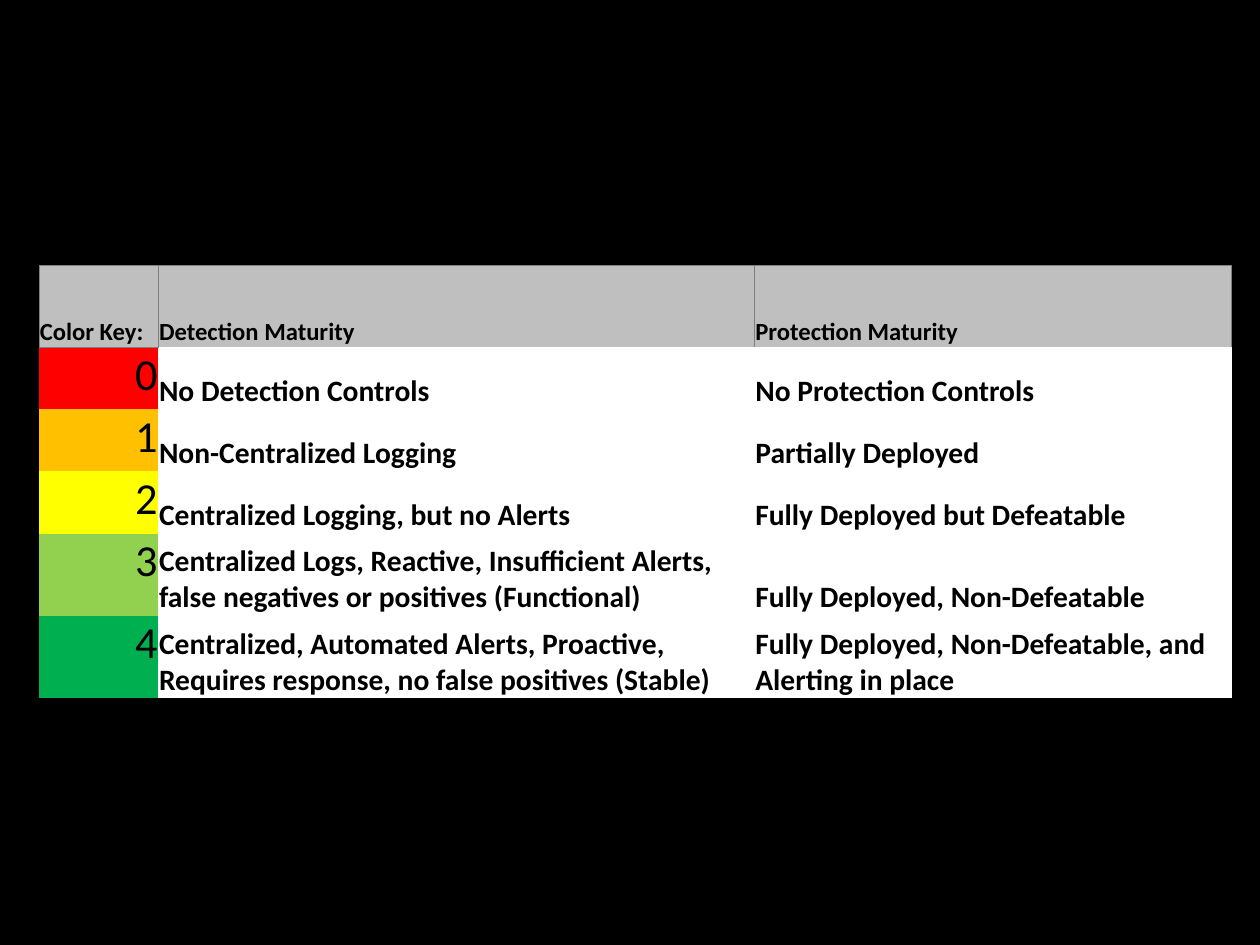
from dataclasses import dataclass

from lxml import etree
from pptx import Presentation
from pptx import util as u
from pptx.dml.color import RGBColor
from pptx.enum import text
from pptx.oxml import ns


@dataclass(frozen=True)
class Theme:
    font: str = "Calibri"
    background: str = "000000"
    ink: str = "000000"
    header_fill: str = "BFBFBF"
    body_fill: str = "FFFFFF"
    border: str = "7F7F7F"
    level_fills: tuple = ("FF0000", "FFC000", "FFFF00", "92D050", "00B050")
    header_size: int = 20
    level_size: int = 36
    body_size: int = 24
    border_width: float = 0.5


THEME = Theme()

HEADERS = ("Color Key:", "Detection Maturity", "Protection Maturity")
MATURITY_LEVELS = (
    ("No Detection Controls", "No Protection Controls"),
    ("Non-Centralized Logging", "Partially Deployed"),
    ("Centralized Logging, but no Alerts", "Fully Deployed but Defeatable"),
    ("Centralized Logs, Reactive, Insufficient Alerts, "
     "false negatives or positives (Functional)",
     "Fully Deployed, Non-Defeatable"),
    ("Centralized, Automated Alerts, Proactive, "
     "Requires response, no false positives (Stable)",
     "Fully Deployed, Non-Defeatable, and Alerting in place"),
)
COLUMN_SHARES = (0.1, 0.5, 0.4)
ROW_HEIGHTS = (2.34, 1.78, 1.78, 1.78, 2.36, 2.36)


def write_cell(cell, wording, *, size, fill, bold=True, sides="",
               align=text.PP_ALIGN.LEFT, anchor=text.MSO_ANCHOR.BOTTOM):
    """Fill one cell with formatted text; sides names its ruled edges."""
    cell.margin_left = cell.margin_right = cell.margin_top = u.Cm(0.02)
    cell.margin_bottom = 0
    cell.vertical_anchor = anchor
    cell.fill.solid()
    cell.fill.fore_color.rgb = RGBColor.from_string(fill)

    paragraph = cell.text_frame.paragraphs[0]
    paragraph.alignment = align
    run = paragraph.add_run()
    run.text = wording
    run.font.name = THEME.font
    run.font.size = u.Pt(size)
    run.font.bold = bold
    run.font.color.rgb = RGBColor.from_string(THEME.ink)
    rule_cell(cell, sides)


def rule_cell(cell, sides):
    """Draw the named edges and clear the others, ahead of the cell fill."""
    properties = cell._tc.get_or_add_tcPr()
    for position, side in enumerate("LRTB"):
        line = etree.Element(ns.qn(f"a:ln{side}"))
        if side in sides:
            line.set("w", str(u.Pt(THEME.border_width)))
            solid = etree.SubElement(line, ns.qn("a:solidFill"))
            etree.SubElement(solid, ns.qn("a:srgbClr"), val=THEME.border)
        else:
            etree.SubElement(line, ns.qn("a:noFill"))
        properties.insert(position, line)


def add_maturity_table(slide, left, top, width):
    height = sum(ROW_HEIGHTS)
    table = slide.shapes.add_table(
        len(ROW_HEIGHTS), len(HEADERS),
        u.Cm(left), u.Cm(top), u.Cm(width), u.Cm(height)).table
    table.first_row = table.horz_banding = False
    for column, share in zip(table.columns, COLUMN_SHARES):
        column.width = u.Cm(width * share)
    for row, row_height in zip(table.rows, ROW_HEIGHTS):
        row.height = u.Cm(row_height)

    # Header row
    for index, header in enumerate(HEADERS):
        write_cell(table.cell(0, index), header, size=THEME.header_size,
                   fill=THEME.header_fill, sides="LRT" if index else "LRTB")

    # One row for each maturity level, with its colour key
    for level, descriptions in enumerate(MATURITY_LEVELS):
        row = level + 1
        write_cell(table.cell(row, 0), str(level), size=THEME.level_size,
                   fill=THEME.level_fills[level], bold=False,
                   sides="" if level else "T", align=text.PP_ALIGN.RIGHT,
                   anchor=text.MSO_ANCHOR.TOP)
        for index, description in enumerate(descriptions, start=1):
            write_cell(table.cell(row, index), description,
                       size=THEME.body_size, fill=THEME.body_fill)


def main():
    presentation = Presentation()
    presentation.slide_width = u.Cm(36.12)
    presentation.slide_height = u.Cm(27.1)
    slide = presentation.slides.add_slide(presentation.slide_layouts[6])
    slide.background.fill.solid()
    slide.background.fill.fore_color.rgb = RGBColor.from_string(THEME.background)
    add_maturity_table(slide, left=1.12, top=7.62, width=34.19)
    presentation.save("out.pptx")


if __name__ == "__main__":
    main()
